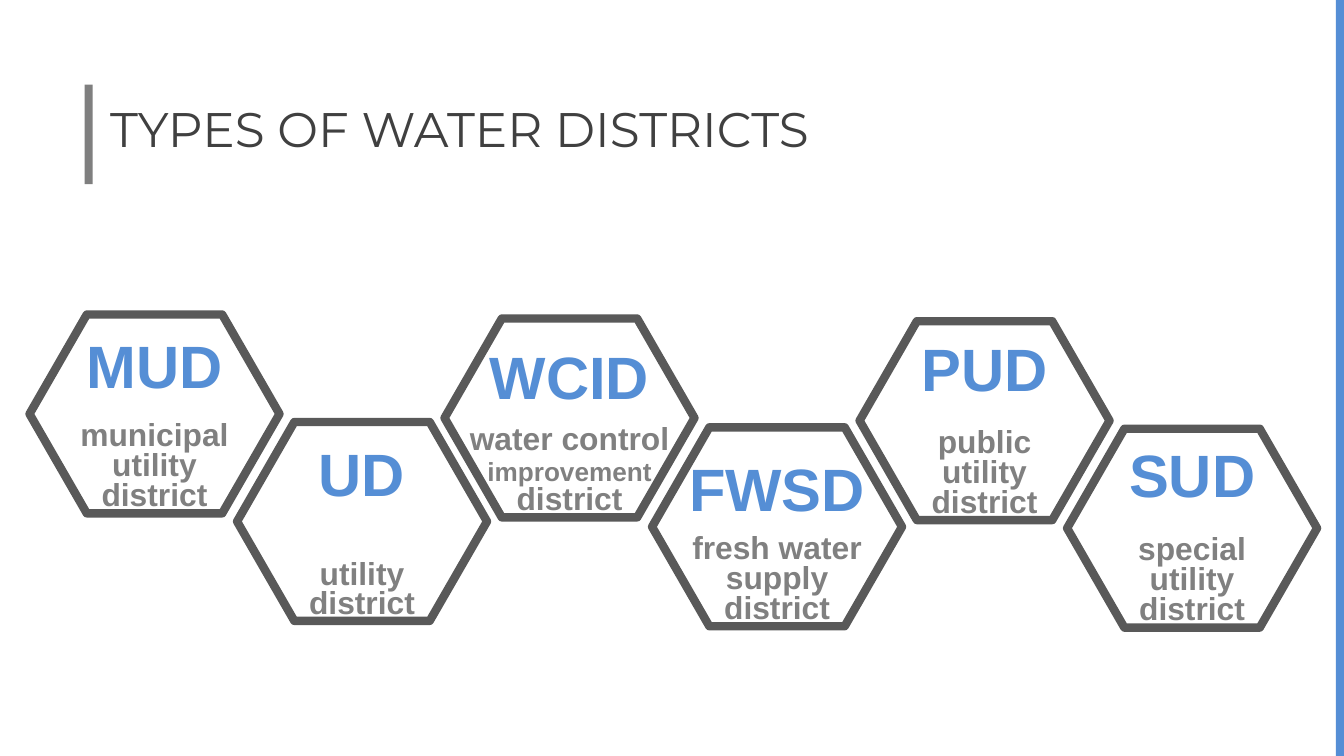
"""Build a slide of hexagons naming the types of water districts."""
from dataclasses import dataclass

from pptx import Presentation
from pptx.dml.color import RGBColor
from pptx.enum.shapes import MSO_SHAPE
from pptx.enum.text import MSO_ANCHOR, MSO_AUTO_SIZE, PP_ALIGN
from pptx.util import Inches, Pt

RECTANGLE, HEXAGON = MSO_SHAPE.RECTANGLE, MSO_SHAPE.HEXAGON
LEFT, CENTER = PP_ALIGN.LEFT, PP_ALIGN.CENTER
TOP = MSO_ANCHOR.TOP
FIXED, GROW = MSO_AUTO_SIZE.NONE, MSO_AUTO_SIZE.SHAPE_TO_FIT_TEXT


@dataclass(frozen=True)
class Theme:
    """Colours, fonts and type sizes of the slide."""
    accent: RGBColor = RGBColor(0x55, 0x8E, 0xD5)
    bar: RGBColor = RGBColor(0x7F, 0x7F, 0x7F)
    heading: RGBColor = RGBColor(0x40, 0x40, 0x40)
    body: RGBColor = RGBColor(0x80, 0x80, 0x80)
    outline: RGBColor = RGBColor(0x59, 0x59, 0x59)
    heading_font: str = "Montserrat"
    body_font: str = "Arial"
    heading_size: float = 26
    acronym_size: float = 32
    name_size: float = 17
    small_size: float = 14
    name_spacing: float = 16
    outline_width: float = 4.5


THEME = Theme()
SLIDE_WIDTH = 10
SLIDE_HEIGHT = SLIDE_WIDTH * 9 / 16
FIRST_LEFT, LAST_LEFT = 0.22, 7.94
HEX_WIDTH, HEX_HEIGHT = 1.86, 1.48
ACRONYM_WIDTH, ACRONYM_HEIGHT = 1.69, 0.64
NAME_WIDTH, NAME_BOTTOM = 1.78, 1.54
TWO_LINES, THREE_LINES = 0.55, 0.78


@dataclass(frozen=True)
class District:
    """One district; a name paragraph is a string or a tuple of (text, size) runs."""
    acronym: str
    name: tuple
    hex_top: float
    acronym_drop: float
    name_height: float = THREE_LINES


DISTRICTS = (
    District("MUD", ("municipal", "utility", "district"), 2.34, 0.06),
    District("UD", ("utility", "district"), 3.14, 0.06, TWO_LINES),
    District("WCID", ((("water control ", THEME.name_size),
                       ("improvement", THEME.small_size)), "district"), 2.37, 0.11),
    District("FWSD", ("fresh water supply", "district"), 3.18, 0.13),
    District("PUD", ("public", "utility", "district"), 2.39, 0.03),
    District("SUD", ("special", "utility", "district"), 3.19, 0.02),
)


def write_text(frame, paragraphs, *, size, color, font=THEME.body_font,
               bold=False, align=CENTER, spacing=None, fit=GROW):
    """Fill a text frame with formatted paragraphs."""
    frame.word_wrap = True
    frame.auto_size = fit
    frame.vertical_anchor = TOP
    for index, content in enumerate(paragraphs):
        paragraph = frame.add_paragraph() if index else frame.paragraphs[0]
        paragraph.alignment = align
        if spacing:
            paragraph.line_spacing = Pt(spacing)
        runs = ((content, size),) if isinstance(content, str) else content
        for words, run_size in runs:
            run = paragraph.add_run()
            run.text = words
            run.font.name = font
            run.font.size = Pt(run_size)
            run.font.bold = bold
            run.font.color.rgb = color


def add_bar(slide, left, top, width, height, color):
    """Add a plain filled bar."""
    bar = slide.shapes.add_shape(
        RECTANGLE, Inches(left), Inches(top), Inches(width), Inches(height))
    bar.shadow.inherit = False
    bar.fill.solid()
    bar.fill.fore_color.rgb = color
    bar.line.fill.background()


def add_heading(slide, words):
    """Place and format the slide title."""
    heading = slide.shapes.title
    heading.left, heading.top = Inches(0.72), Inches(0.64)
    heading.width, heading.height = Inches(6.7), Inches(0.73)
    frame = heading.text_frame
    frame.margin_left = frame.margin_right = Inches(0.1)
    frame.margin_top = frame.margin_bottom = Inches(0.1)
    write_text(frame, [words], size=THEME.heading_size, color=THEME.heading,
               font=THEME.heading_font, align=LEFT, fit=FIXED)


def add_hexagon(shapes, left, top):
    """Add the outlined hexagon of a district."""
    hexagon = shapes.add_shape(
        HEXAGON, Inches(left), Inches(top), Inches(HEX_WIDTH), Inches(HEX_HEIGHT))
    hexagon.adjustments[0] = 0.288
    hexagon.shadow.inherit = False
    hexagon.fill.background()
    hexagon.line.color.rgb = THEME.outline
    hexagon.line.width = Pt(THEME.outline_width)


def add_label(shapes, center, top, width, height, paragraphs, **text_format):
    """Add a bold text box centred on a horizontal position."""
    label = shapes.add_textbox(
        Inches(center - width / 2), Inches(top), Inches(width), Inches(height))
    write_text(label.text_frame, paragraphs, bold=True, **text_format)


def add_district(slide, district, left):
    """Group the name, hexagon and acronym of one district."""
    shapes = slide.shapes.add_group_shape().shapes
    center = left + HEX_WIDTH / 2
    name_top = district.hex_top + NAME_BOTTOM - district.name_height
    add_label(shapes, center, name_top, NAME_WIDTH, district.name_height,
              district.name, size=THEME.name_size, color=THEME.body,
              spacing=THEME.name_spacing)
    add_hexagon(shapes, left, district.hex_top)
    add_label(shapes, center, district.hex_top + district.acronym_drop,
              ACRONYM_WIDTH, ACRONYM_HEIGHT, [district.acronym],
              size=THEME.acronym_size, color=THEME.accent)


def main():
    """Build and save the presentation."""
    deck = Presentation()
    deck.slide_width, deck.slide_height = Inches(SLIDE_WIDTH), Inches(SLIDE_HEIGHT)
    slide = deck.slides.add_slide(deck.slide_layouts.get_by_name("Title Only"))
    add_bar(slide, 0.63, 0.63, 0.06, 0.74, THEME.bar)
    add_bar(slide, SLIDE_WIDTH - 0.06, 0, 0.06, SLIDE_HEIGHT, THEME.accent)
    add_heading(slide, "TYPES OF WATER DISTRICTS")
    step = (LAST_LEFT - FIRST_LEFT) / (len(DISTRICTS) - 1)
    for index, district in enumerate(DISTRICTS):
        add_district(slide, district, FIRST_LEFT + index * step)
    deck.save("out.pptx")


if __name__ == "__main__":
    main()
